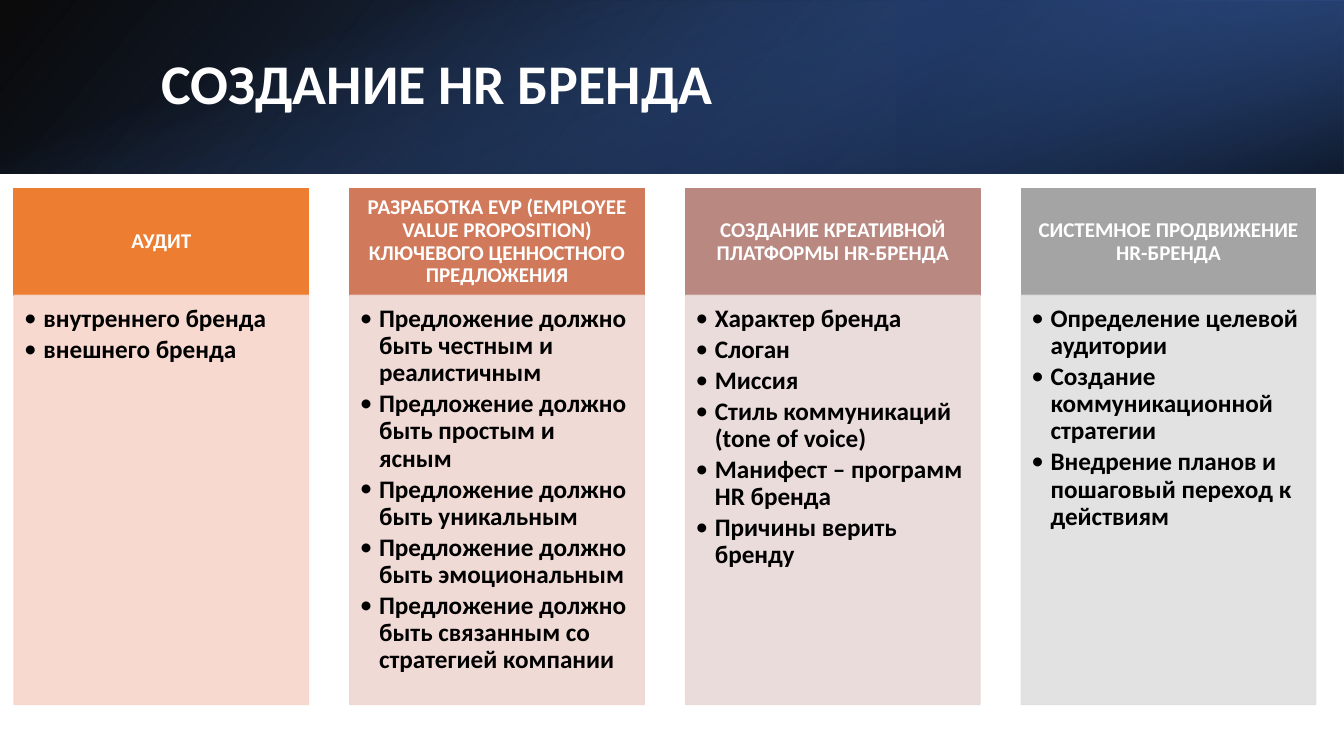
from lxml import etree
from pptx import Presentation
from pptx.dml.color import RGBColor
from pptx.enum import shapes, text
from pptx.oxml.ns import qn
from pptx.util import Inches, Pt

FONT = "Calibri"
WHITE = RGBColor(0xFF, 0xFF, 0xFF)
BLACK = RGBColor(0x00, 0x00, 0x00)
NAVY = RGBColor(0x1F, 0x38, 0x64)
BLUE = RGBColor(0x2F, 0x54, 0x96)
BRIGHT_BLUE = RGBColor(0x44, 0x72, 0xC4)
ORANGE = RGBColor(0xED, 0x7D, 0x31)
PEACH = RGBColor(0xF7, 0xD5, 0xCB)
TERRACOTTA = RGBColor(0xD0, 0x7A, 0x5B)
PINK = RGBColor(0xEF, 0xD6, 0xD1)
ROSE = RGBColor(0xB8, 0x88, 0x81)
PALE_ROSE = RGBColor(0xE8, 0xD9, 0xD7)
GRAY = RGBColor(0xA4, 0xA4, 0xA4)
PALE_GRAY = RGBColor(0xDF, 0xDF, 0xDF)

COLUMN_LEFT, COLUMN_STEP, COLUMN_WIDTH = 0.14, 3.33, 2.92
HEADER_TOP, HEADER_HEIGHT, LIST_HEIGHT = 1.87, 1.06, 4.06

# Heading, heading colour, list colour, list items
COLUMNS = [
    ("АУДИТ", ORANGE, PEACH, ["внутреннего бренда", "внешнего бренда"]),
    ("РАЗРАБОТКА EVP (EMPLOYEE VALUE PROPOSITION) КЛЮЧЕВОГО ЦЕННОСТНОГО ПРЕДЛОЖЕНИЯ",
     TERRACOTTA, PINK,
     ["Предложение должно быть честным и реалистичным",
      "Предложение должно быть простым и ясным",
      "Предложение должно быть уникальным",
      "Предложение должно быть эмоциональным",
      "Предложение должно быть связанным со стратегией компании"]),
    ("СОЗДАНИЕ КРЕАТИВНОЙ ПЛАТФОРМЫ HR-БРЕНДА", ROSE, PALE_ROSE,
     ["Характер бренда", "Слоган", "Миссия",
      "Стиль коммуникаций (tone of voice)",
      "Манифест – программ HR бренда",
      "Причины верить бренду"]),
    ("CИСТЕМНОЕ ПРОДВИЖЕНИЕ HR-БРЕНДА", GRAY, PALE_GRAY,
     ["Определение целевой аудитории",
      "Создание коммуникационной стратегии",
      "Внедрение планов и пошаговый переход к действиям"]),
]


def place(box, left, top, width, height):
    box.left, box.top = Inches(left), Inches(top)
    box.width, box.height = Inches(width), Inches(height)


def add_rectangle(page, left, top, width, height):
    box = page.shapes.add_shape(
        shapes.MSO_SHAPE.RECTANGLE,
        Inches(left), Inches(top), Inches(width), Inches(height))
    box.shadow.inherit = False
    return box


def add_gradient(page, place_at, stops, angle, rotation=0, flip=False):
    """Add a banner layer; stops are (position %, colour, opacity %)."""
    box = add_rectangle(page, *place_at)
    box.rotation = rotation
    if flip:
        box._element.spPr.find(qn("a:xfrm")).set("flipH", "1")
    box.line.fill.background()
    box.fill.gradient()
    box.fill.gradient_angle = 360 - angle
    stop_list = box._element.spPr.find(".//" + qn("a:gsLst"))
    for old_stop in list(stop_list):
        stop_list.remove(old_stop)
    for position, color, opacity in stops:
        stop = etree.SubElement(stop_list, qn("a:gs"), pos=str(position * 1000))
        shade = etree.SubElement(stop, qn("a:srgbClr"), val=str(color))
        etree.SubElement(shade, qn("a:alpha"), val=str(opacity * 1000))


def paint(box, color, opacity=100):
    """Give the box a fill and a thin outline of one colour."""
    box.fill.solid()
    box.fill.fore_color.rgb = color
    box.line.color.rgb = color
    box.line.width = Pt(1)
    if opacity < 100:
        for shade in box._element.spPr.iter(qn("a:srgbClr")):
            etree.SubElement(shade, qn("a:alpha"), val=str(opacity * 1000))


def set_frame(box, anchor, left, top, right, bottom):
    frame = box.text_frame
    frame.word_wrap = True
    frame.auto_size = text.MSO_AUTO_SIZE.NONE
    frame.vertical_anchor = anchor
    frame.margin_left, frame.margin_top = Inches(left), Inches(top)
    frame.margin_right, frame.margin_bottom = Inches(right), Inches(bottom)
    return frame


def write(para, words, size, color, align=text.PP_ALIGN.LEFT, before=0):
    para.alignment = align
    para.line_spacing = 0.9
    para.space_before = Pt(before)
    para.space_after = Pt(0)
    span = para.add_run()
    span.text = words
    span.font.name = FONT
    span.font.size = Pt(size)
    span.font.bold = True
    span.font.color.rgb = color


def add_bullet(para):
    properties = para._p.get_or_add_pPr()
    properties.set("marL", str(Inches(0.19)))
    properties.set("indent", str(Inches(-0.19)))
    bullet_color = etree.SubElement(properties, qn("a:buClr"))
    etree.SubElement(bullet_color, qn("a:srgbClr"), val=str(BLACK))
    etree.SubElement(properties, qn("a:buFont"), typeface=FONT)
    etree.SubElement(properties, qn("a:buChar"), char="•")


def add_banner(page):
    add_gradient(page, (0, 0, 13.33, 1.72),
                 [(0, BLACK, 96), (100, BLUE, 100)], 140, flip=True)
    add_gradient(page, (8.89, 0, 4.44, 1.72),
                 [(0, NAVY, 68), (19, NAVY, 68), (100, BRIGHT_BLUE, 79)],
                 320, rotation=180, flip=True)
    add_gradient(page, (5.8, -5.8, 1.72, 13.33),
                 [(0, BRIGHT_BLUE, 0), (23, BRIGHT_BLUE, 0),
                  (99, BLACK, 74), (100, BLACK, 74)],
                 340, rotation=90)


def fill_title(page, words):
    title = page.shapes.title
    place(title, 1.5, 0.38, 10.98, 0.96)
    frame = set_frame(title, text.MSO_ANCHOR.MIDDLE, 0.1, 0.05, 0.1, 0.05)
    write(frame.paragraphs[0], words, 40, WHITE)
    page.shapes._spTree.append(title._element)  # bring above the banner


def add_header(page, left, words, color):
    box = add_rectangle(page, left, HEADER_TOP, COLUMN_WIDTH, HEADER_HEIGHT)
    paint(box, color)
    frame = set_frame(box, text.MSO_ANCHOR.MIDDLE, 0.12, 0.07, 0.12, 0.07)
    write(frame.paragraphs[0], words, 15, WHITE, text.PP_ALIGN.CENTER)


def fill_list(page, box, left, items, color):
    place(box, left, HEADER_TOP + HEADER_HEIGHT, COLUMN_WIDTH, LIST_HEIGHT)
    paint(box, color, opacity=90)
    frame = set_frame(box, text.MSO_ANCHOR.TOP, 0.1, 0.1, 0.14, 0.16)
    for index, item in enumerate(items):
        para = frame.add_paragraph() if index else frame.paragraphs[0]
        para.level = 1
        write(para, item, 18, BLACK, before=2.7 if index else 0)
        add_bullet(para)
    page.shapes._spTree.append(box._element)  # follow its header


def main():
    deck = Presentation()
    deck.slide_width, deck.slide_height = Inches(13.33), Inches(7.5)
    comparison = deck.slide_layouts.get_by_name("Comparison")
    page = deck.slides.add_slide(comparison)
    bodies = [box for box in page.placeholders if box != page.shapes.title]

    add_banner(page)
    fill_title(page, "СОЗДАНИЕ HR БРЕНДА")
    for index, (heading, dark, light, items) in enumerate(COLUMNS):
        left = COLUMN_LEFT + index * COLUMN_STEP
        add_header(page, left, heading, dark)
        fill_list(page, bodies[index], left, items, light)
    deck.save("out.pptx")


if __name__ == "__main__":
    main()
